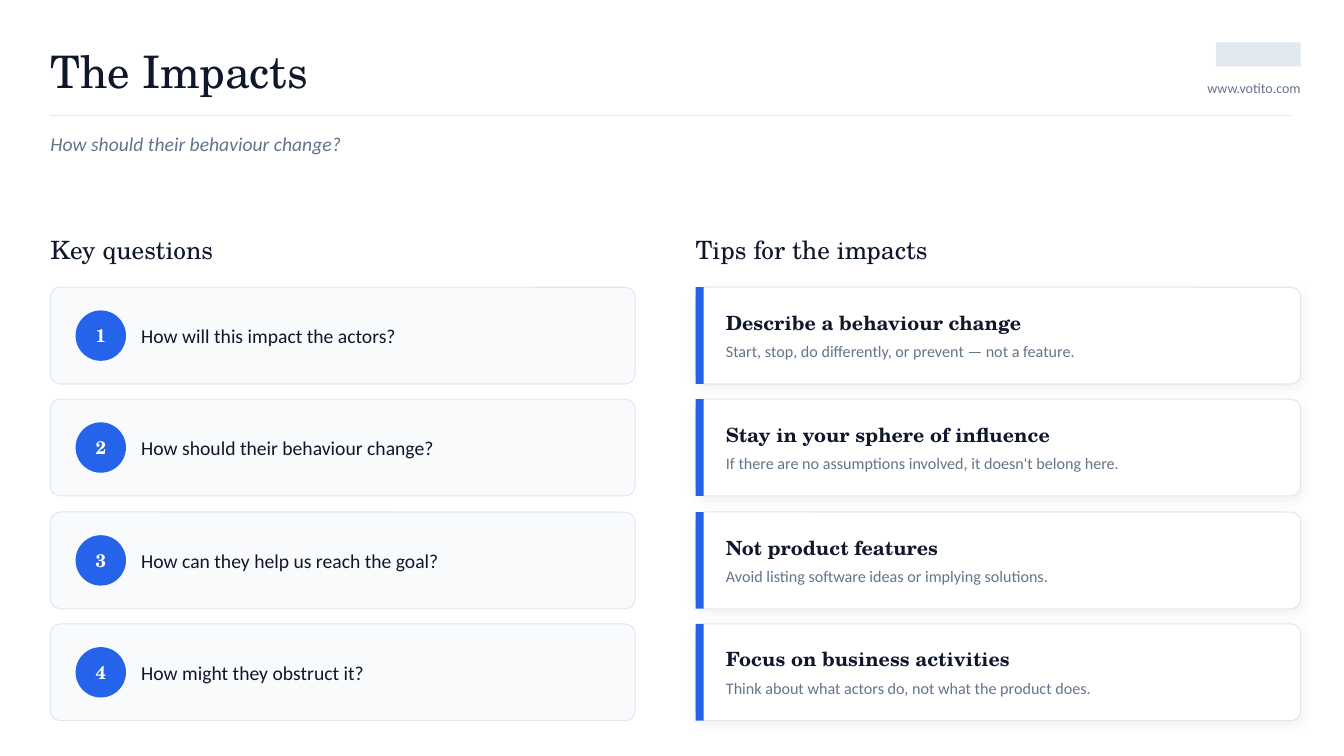
from dataclasses import dataclass

from lxml import etree
from pptx import Presentation
from pptx.dml.color import RGBColor
from pptx.enum.shapes import MSO_CONNECTOR, MSO_SHAPE
from pptx.enum.text import MSO_ANCHOR, MSO_AUTO_SIZE, PP_ALIGN
from pptx.oxml.ns import qn
from pptx.shapes.autoshape import Shape
from pptx.slide import Slide
from pptx.text.text import TextFrame
from pptx.util import Emu, Pt

LEFT, CENTER, RIGHT = PP_ALIGN.LEFT, PP_ALIGN.CENTER, PP_ALIGN.RIGHT
MIDDLE = MSO_ANCHOR.MIDDLE
NO_AUTOFIT = MSO_AUTO_SIZE.NONE
ROUNDED, OVAL, RECT = MSO_SHAPE.ROUNDED_RECTANGLE, MSO_SHAPE.OVAL, MSO_SHAPE.RECTANGLE
STRAIGHT = MSO_CONNECTOR.STRAIGHT

PX = 9144
LEFT_X, RIGHT_X = 50, 690
LEFT_W, RIGHT_W = 580, 600
CARD_TOP, CARD_H = 285, 96
CARD_PITCH = 111.4
CARD_RADIUS = 0.104
BADGE = 50


@dataclass(frozen=True)
class Theme:
    serif: str = "TeX Gyre Schola"
    sans: str = "Calibri"
    ink: str = "0F172A"
    muted: str = "64748B"
    border: str = "E2E8F0"
    panel: str = "F8FAFC"
    white: str = "FFFFFF"
    accent: str = "2563EB"
    shadow: str = "000000"
    title: float = 32
    heading: float = 18
    body: float = 14
    badge: float = 13
    detail: float = 11.5
    small: float = 10
    hairline: float = 0.75
    tip_gap: float = 5


@dataclass(frozen=True)
class Box:
    x: int
    y: int
    w: int
    h: int

    def emu(self) -> tuple[Emu, Emu, Emu, Emu]:
        return Emu(self.x * PX), Emu(self.y * PX), Emu(self.w * PX), Emu(self.h * PX)


@dataclass(frozen=True)
class Tip:
    heading: str
    detail: str


T = Theme()

QUESTIONS = [
    "How will this impact the actors?",
    "How should their behaviour change?",
    "How can they help us reach the goal?",
    "How might they obstruct it?",
]
TIPS = [
    Tip("Describe a behaviour change", "Start, stop, do differently, or prevent — not a feature."),
    Tip("Stay in your sphere of influence", "If there are no assumptions involved, it doesn't belong here."),
    Tip("Not product features", "Avoid listing software ideas or implying solutions."),
    Tip("Focus on business activities", "Think about what actors do, not what the product does."),
]


def write(tf: TextFrame, text: str, *, size: float, font: str = T.sans, color: str = T.ink,
          bold: bool = False, italic: bool = False, align: PP_ALIGN = LEFT,
          before: float = 0, new: bool = False) -> None:
    p = tf.add_paragraph() if new else tf.paragraphs[-1]
    p.alignment = align
    p.space_before = Pt(before)
    r = p.add_run()
    r.text = text
    r.font.name = font
    r.font.size = Pt(size)
    r.font.bold = bold
    r.font.italic = italic
    r.font.color.rgb = RGBColor.from_string(color)


def prepare(sp: Shape) -> TextFrame:
    tf = sp.text_frame
    tf.word_wrap = True
    tf.auto_size = NO_AUTOFIT
    tf.vertical_anchor = MIDDLE
    tf.margin_left = tf.margin_top = tf.margin_right = tf.margin_bottom = 0
    return tf


def add_text(slide: Slide, box: Box) -> TextFrame:
    return prepare(slide.shapes.add_textbox(*box.emu()))


def place(slide: Slide, idx: int, box: Box) -> TextFrame:
    sp = next(ph for ph in slide.placeholders if ph.placeholder_format.idx == idx)
    sp.left, sp.top, sp.width, sp.height = box.emu()
    return prepare(sp)


def add_shape(slide: Slide, kind: MSO_SHAPE, box: Box, fill: str, line: str = "") -> Shape:
    sp = slide.shapes.add_shape(kind, *box.emu())
    sp.fill.solid()
    sp.fill.fore_color.rgb = RGBColor.from_string(fill)
    if line:
        sp.line.color.rgb = RGBColor.from_string(line)
        sp.line.width = Pt(T.hairline)
    else:
        sp.line.fill.background()
    sp.shadow.inherit = False
    return sp


def add_card(slide: Slide, box: Box, fill: str) -> Shape:
    sp = add_shape(slide, ROUNDED, box, fill, T.border)
    sp.adjustments[0] = CARD_RADIUS
    return sp


def cast_shadow(sp: Shape) -> None:
    effects = sp._element.spPr.find(qn("a:effectLst"))
    shadow = etree.SubElement(effects, qn("a:outerShdw"), blurRad=str(Pt(8)),
                              dist=str(Pt(2)), dir="5400000", algn="bl", rotWithShape="0")
    color = etree.SubElement(shadow, qn("a:srgbClr"), val=T.shadow)
    etree.SubElement(color, qn("a:alpha"), val="5000")


def add_rule(slide: Slide, x1: int, x2: int, y: int) -> None:
    line = slide.shapes.add_connector(STRAIGHT, *(Emu(v * PX) for v in (x1, y, x2, y)))
    line.line.color.rgb = RGBColor.from_string(T.border)
    line.line.width = Pt(T.hairline)
    etree.SubElement(line._element.spPr, qn("a:effectLst"))


def add_question(slide: Slide, number: int, y: int, text: str) -> None:
    add_card(slide, Box(LEFT_X, y, LEFT_W, CARD_H), T.panel)
    badge = add_shape(slide, OVAL, Box(LEFT_X + 25, y + (CARD_H - BADGE) // 2, BADGE, BADGE), T.accent)
    write(prepare(badge), str(number), size=T.badge, font=T.serif, color=T.white, bold=True, align=CENTER)
    write(add_text(slide, Box(LEFT_X + 90, y, 475, CARD_H)), text, size=T.body)


def add_tip(slide: Slide, y: int, tip: Tip) -> None:
    cast_shadow(add_card(slide, Box(RIGHT_X, y, RIGHT_W, CARD_H), T.white))
    add_shape(slide, RECT, Box(RIGHT_X, y, 8, CARD_H), T.accent)
    tf = add_text(slide, Box(RIGHT_X + 30, y, 560, CARD_H))
    write(tf, tip.heading, size=T.body, font=T.serif, bold=True)
    write(tf, tip.detail, size=T.detail, color=T.muted, before=T.tip_gap, new=True)


def add_header(slide: Slide) -> None:
    write(place(slide, 0, Box(LEFT_X, 35, 900, 70)), "The Impacts", size=T.title, font=T.serif)
    add_shape(slide, RECT, Box(1206, 42, 84, 24), T.border)
    write(add_text(slide, Box(1030, 72, 260, 30)), "www.votito.com",
          size=T.small, color=T.muted, align=RIGHT)
    add_rule(slide, LEFT_X, 1280, 115)
    write(add_text(slide, Box(LEFT_X, 125, 1230, 35)), "How should their behaviour change?",
          size=T.body, color=T.muted, italic=True)


def main() -> None:
    prs = Presentation()
    prs.slide_width, prs.slide_height = Emu(1333 * PX), Emu(750 * PX)
    slide = prs.slides.add_slide(prs.slide_layouts.get_by_name("Comparison"))
    add_header(slide)
    write(place(slide, 1, Box(LEFT_X, 225, LEFT_W, 45)), "Key questions", size=T.heading, font=T.serif)
    write(place(slide, 3, Box(RIGHT_X, 225, RIGHT_W, 45)), "Tips for the impacts", size=T.heading, font=T.serif)
    for ph in list(slide.placeholders):
        if not ph.text_frame.text:
            ph._element.getparent().remove(ph._element)
    for i, (question, tip) in enumerate(zip(QUESTIONS, TIPS)):
        y = CARD_TOP + round(i * CARD_PITCH)
        add_question(slide, i + 1, y, question)
        add_tip(slide, y, tip)
    prs.save("out.pptx")


if __name__ == "__main__":
    main()
